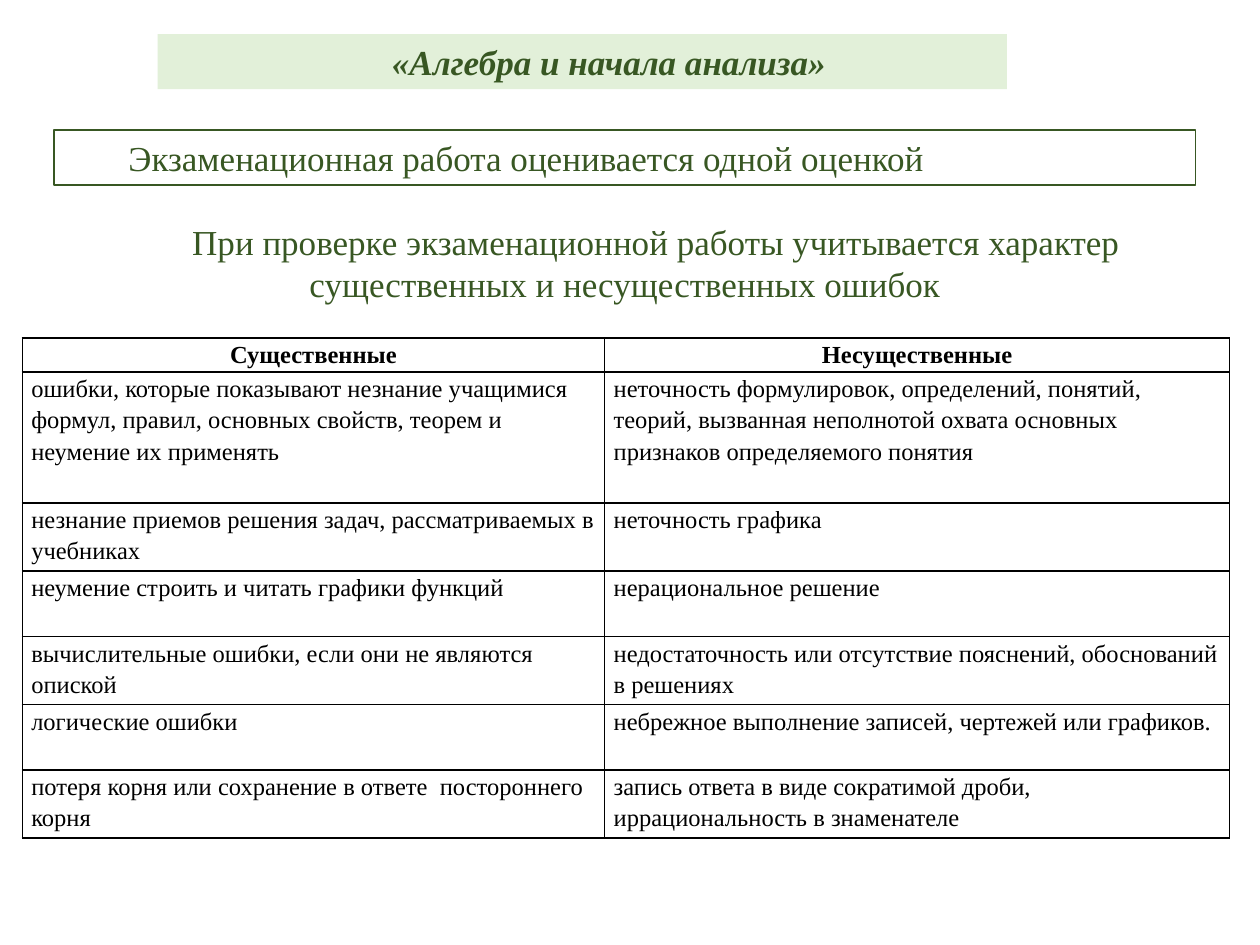
from lxml import etree
from pptx import Presentation
from pptx import util as u
from pptx.dml.color import RGBColor
from pptx.enum import shapes, text
from pptx.oxml.ns import qn

# Content
HEADS = ("Существенные", "Несущественные")
ROWS = [
    ("ошибки, которые показывают незнание учащимися формул, правил, "
     "основных свойств, теорем и неумение их применять",
     "неточность формулировок, определений, понятий, теорий, вызванная "
     "неполнотой охвата основных признаков определяемого понятия"),
    ("незнание приемов решения задач, рассматриваемых в учебниках",
     "неточность графика"),
    ("неумение строить и читать графики функций",
     "нерациональное решение"),
    ("вычислительные ошибки, если они не являются опиской",
     "недостаточность или отсутствие пояснений, обоснований в решениях"),
    ("логические ошибки",
     "небрежное выполнение записей, чертежей или графиков. "),
    ("потеря корня или сохранение в ответе  постороннего корня",
     "запись ответа в виде сократимой дроби, иррациональность в знаменателе"),
]
MID, LEFT = text.PP_ALIGN.CENTER, text.PP_ALIGN.LEFT
# Each box: words, place in cm, alignment, fill, line, font extras
BOXES = [
    ("Экзаменационная работа оценивается одной оценкой",
     (1.09, 2.62, 23.01, 1.11), LEFT, None, "green", {}),
    ("При проверке экзаменационной работы учитывается характер "
     "существенных и несущественных ошибок",
     (0.94, 4.32, 23.32, 1.96), MID, None, None, {}),
    ("«Алгебра и начала анализа» ",
     (3.18, 0.69, 17.12, 1.11), MID, "pale", None,
     {"bold": True, "italic": True}),
]

# Theme and measures (cm)
THEME = {
    "font": "Times New Roman", "big": 20, "small": 14,
    "green": "385723", "pale": "E2F0D9", "black": "000000",
}
COLS = (11.74, 12.6)
HIGH = (0.69, 2.64, 1.37, 1.32, 1.37, 1.32, 1.37)
SPOT = (0.45, 6.81)
INDENT = 1.25


def tint(name):
    return RGBColor.from_string(THEME[name])


def put(obj, vals):
    for key, val in vals.items():
        setattr(obj, key, val)


def write(frame, words, size, color, align, extra):
    para = frame.paragraphs[0]
    para.alignment = align
    run = para.add_run()
    run.text = words
    put(run.font, {"name": THEME["font"], "size": u.Pt(THEME[size]), **extra})
    run.font.color.rgb = tint(color)
    return para


def add_box(slide, words, place, align, fill, line, extra):
    box = slide.shapes.add_shape(shapes.MSO_SHAPE.RECTANGLE, *map(u.Cm, place))
    box.shadow.inherit = False
    if fill:
        box.fill.solid()
        box.fill.fore_color.rgb = tint(fill)
    else:
        box.fill.background()
    if line:
        box.line.color.rgb = tint(line)
        box.line.width = u.Pt(0.75)
    else:
        box.line.fill.background()
    put(box.text_frame, {
        "word_wrap": True,
        "auto_size": text.MSO_AUTO_SIZE.SHAPE_TO_FIT_TEXT,
        "vertical_anchor": text.MSO_ANCHOR.MIDDLE if line
        else text.MSO_ANCHOR.TOP})
    para = write(box.text_frame, words, "big", "green", align, extra)
    para._p.get_or_add_pPr().set("indent", str(u.Cm(INDENT)))


def edge(cell):
    props = cell._tc.get_or_add_tcPr()
    for side in ("lnL", "lnR", "lnT", "lnB"):
        line = etree.SubElement(props, qn("a:" + side), w=str(u.Pt(1)))
        fill = etree.SubElement(line, qn("a:solidFill"))
        etree.SubElement(fill, qn("a:srgbClr"), val=THEME["black"])


def add_grid(slide):
    size = (sum(COLS), sum(HIGH))
    grid = slide.shapes.add_table(
        len(HIGH), len(COLS), *map(u.Cm, SPOT + size)).table
    put(grid, {"first_row": False, "horz_banding": False})
    for col, wide in zip(grid.columns, COLS):
        col.width = u.Cm(wide)
    for r, (line, high) in enumerate(zip([HEADS] + ROWS, HIGH)):
        grid.rows[r].height = u.Cm(high)
        for c, words in enumerate(line):
            cell = grid.cell(r, c)
            put(cell, {"margin_left": u.Cm(0.18), "margin_right": u.Cm(0.18),
                       "margin_top": 0, "margin_bottom": 0})
            edge(cell)
            cell.fill.background()
            para = write(cell.text_frame, words, "small", "black",
                         LEFT if r else MID, {"bold": r == 0})
            para.line_spacing = 1.15


def main():
    deck = Presentation()
    put(deck, {"slide_width": u.Cm(25.4), "slide_height": u.Cm(19.05)})
    slide = deck.slides.add_slide(deck.slide_layouts[6])
    # Table of mistakes, then the headings
    add_grid(slide)
    for box in BOXES:
        add_box(slide, *box)
    deck.save("out.pptx")


if __name__ == "__main__":
    main()
